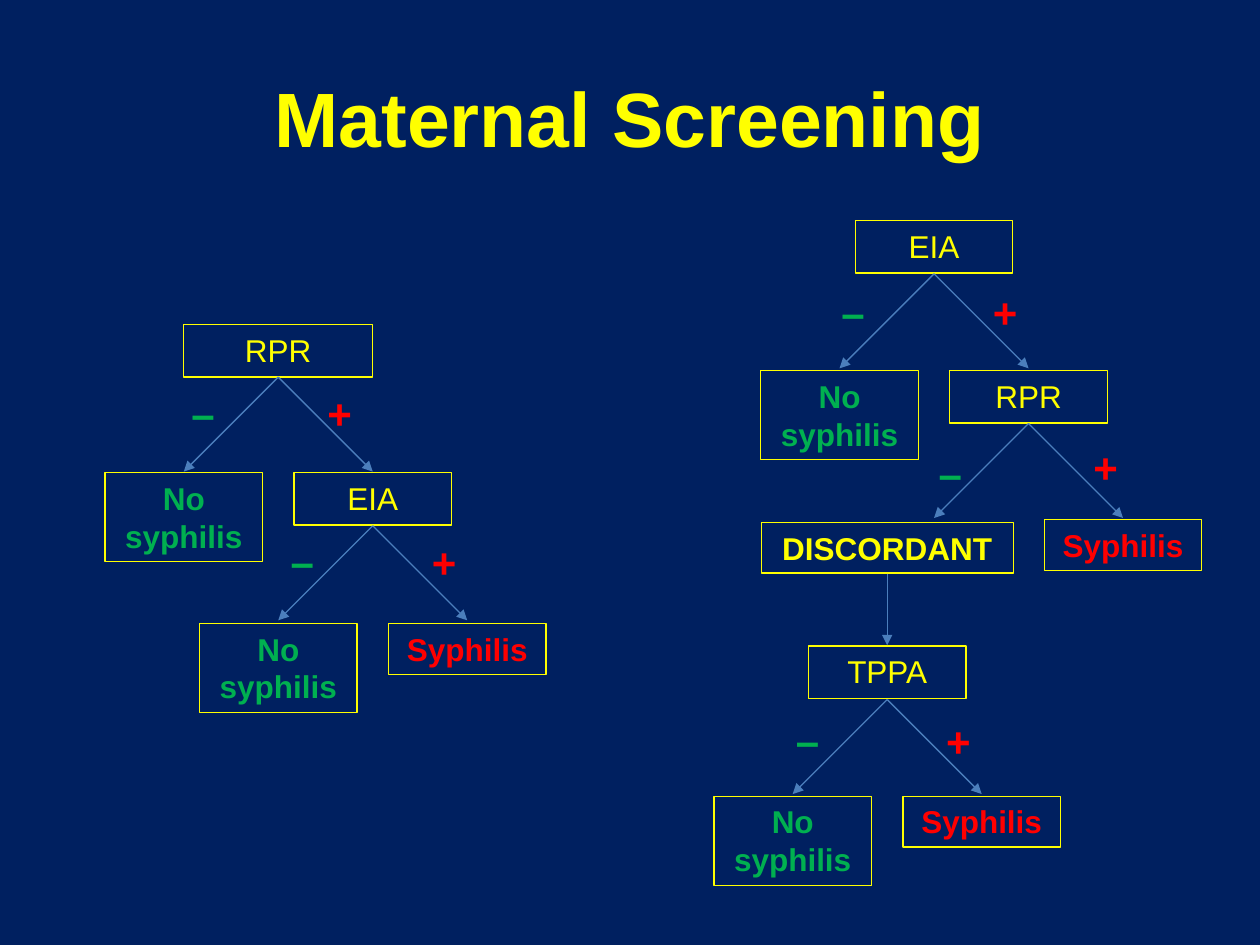
from dataclasses import dataclass

from lxml.etree import SubElement
from pptx import Presentation as new_presentation
from pptx.dml.color import RGBColor
from pptx.enum.shapes import MSO_CONNECTOR as Connector, MSO_SHAPE as Preset
from pptx.enum.text import MSO_ANCHOR as Anchor, PP_ALIGN as Align
from pptx.oxml.ns import qn
from pptx.slide import Slide
from pptx.text.text import TextFrame
from pptx.util import Pt


@dataclass(frozen=True)
class Theme:
    font: str = "Arial"
    background: str = "002060"
    yellow: str = "FFFF00"
    green: str = "00B050"
    red: str = "FF0000"
    arrow: str = "4B7EBC"
    title_size: float = 44
    box_size: float = 18
    sign_size: float = 24
    line_width: float = 0.75


@dataclass(frozen=True)
class Box:
    text: str
    center: float
    top: float
    color: str
    height: float
    bold: bool = True
    width: float = 90


@dataclass(frozen=True)
class Sign:
    text: str
    left: float
    top: float
    color: str


@dataclass(frozen=True)
class Arrow:
    start_x: float
    start_y: float
    end_x: float
    end_y: float


THEME = Theme()
FORK_REACH = 54


def test_box(name: str, center: float, top: float, width: float = 90) -> Box:
    return Box(name, center, top, THEME.yellow, 30, False, width)


def negative_box(center: float, top: float) -> Box:
    return Box("No syphilis", center, top, THEME.green, 51)


def positive_box(center: float, top: float) -> Box:
    return Box("Syphilis", center, top, THEME.red, 29)


BOXES = [
    test_box("RPR", 159, 185.5, 108),
    negative_box(105, 270),
    test_box("EIA", 213, 270),
    negative_box(159, 356.25),
    positive_box(267, 356.25),
    test_box("EIA", 533.75, 126),
    negative_box(479.75, 211.75),
    test_box("RPR", 587.75, 211.75),
    Box("DISCORDANT", 507, 298.5, THEME.yellow, 29, width=144),
    positive_box(641.75, 297),
    test_box("TPPA", 507, 369.25),
    negative_box(453, 455),
    positive_box(561, 455),
]
FORKS = [(159, 215.5), (213, 300.5), (533.75, 156.5), (587.75, 242), (507, 399.75)]
ARROWS = [
    Arrow(x, y, x + reach, y + FORK_REACH)
    for x, y in FORKS
    for reach in (-FORK_REACH, FORK_REACH)
] + [Arrow(507, 327.75, 507, 368.75)]
PLUS_PLACES = [(180, 218), (239.75, 303), (560.25, 160), (617.75, 249), (533.5, 405.25)]
MINUS_PLACES = [(102.25, 218), (159, 302.5), (473.75, 160), (529.25, 252), (447.75, 404.75)]
SIGNS = [Sign("+", left, top, THEME.red) for left, top in PLUS_PLACES] + [
    Sign("–", left, top, THEME.green) for left, top in MINUS_PLACES
]


def write_text(
    frame: TextFrame, text: str, size: float, color: str, bold: bool, align: Align
) -> None:
    frame.word_wrap = True
    paragraph = frame.paragraphs[0]
    paragraph.alignment = align
    run = paragraph.add_run()
    run.text = text
    run.font.name = THEME.font
    run.font.size = Pt(size)
    run.font.bold = bold
    run.font.color.rgb = RGBColor.from_string(color)


def draw_title(slide: Slide, text: str) -> None:
    title = slide.shapes.title
    title.left, title.top, title.width, title.height = Pt(36), Pt(21.6), Pt(648), Pt(90)
    title.text_frame.vertical_anchor = Anchor.MIDDLE
    write_text(title.text_frame, text, THEME.title_size, THEME.yellow, True, Align.CENTER)


def draw_box(slide: Slide, box: Box) -> None:
    shape = slide.shapes.add_shape(
        Preset.RECTANGLE,
        Pt(box.center - box.width / 2),
        Pt(box.top),
        Pt(box.width),
        Pt(box.height),
    )
    shape.shadow.inherit = False
    shape.fill.background()
    shape.line.color.rgb = RGBColor.from_string(THEME.yellow)
    shape.line.width = Pt(THEME.line_width)
    shape.text_frame.vertical_anchor = Anchor.TOP
    write_text(shape.text_frame, box.text, THEME.box_size, box.color, box.bold, Align.CENTER)


def draw_arrow(slide: Slide, arrow: Arrow) -> None:
    connector = slide.shapes.add_connector(
        Connector.STRAIGHT,
        Pt(arrow.start_x),
        Pt(arrow.start_y),
        Pt(arrow.end_x),
        Pt(arrow.end_y),
    )
    connector.line.color.rgb = RGBColor.from_string(THEME.arrow)
    connector.line.width = Pt(THEME.line_width)
    SubElement(connector.line._get_or_add_ln(), qn("a:tailEnd"), type="triangle")
    SubElement(connector._element.spPr, qn("a:effectLst"))


def draw_sign(slide: Slide, sign: Sign) -> None:
    shape = slide.shapes.add_textbox(Pt(sign.left), Pt(sign.top), Pt(24), Pt(36))
    write_text(shape.text_frame, sign.text, THEME.sign_size, sign.color, True, Align.LEFT)


def main() -> None:
    presentation = new_presentation()
    presentation.slide_width, presentation.slide_height = Pt(720), Pt(540)
    slide = presentation.slides.add_slide(presentation.slide_layouts[5])
    slide.background.fill.solid()
    slide.background.fill.fore_color.rgb = RGBColor.from_string(THEME.background)
    draw_title(slide, "Maternal Screening")
    for box in BOXES:
        draw_box(slide, box)
    for arrow in ARROWS:
        draw_arrow(slide, arrow)
    for sign in SIGNS:
        draw_sign(slide, sign)
    presentation.save("out.pptx")


if __name__ == "__main__":
    main()
